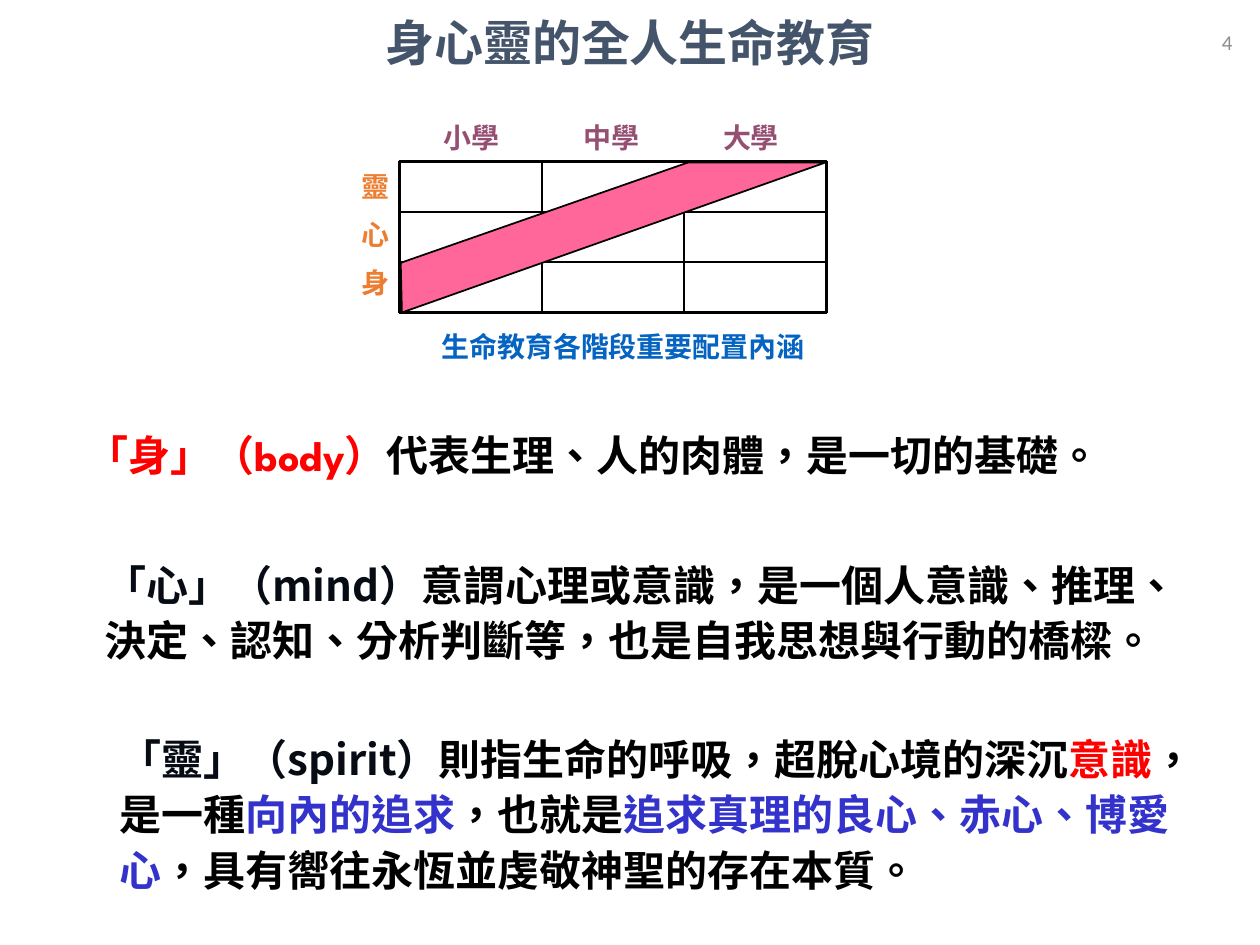
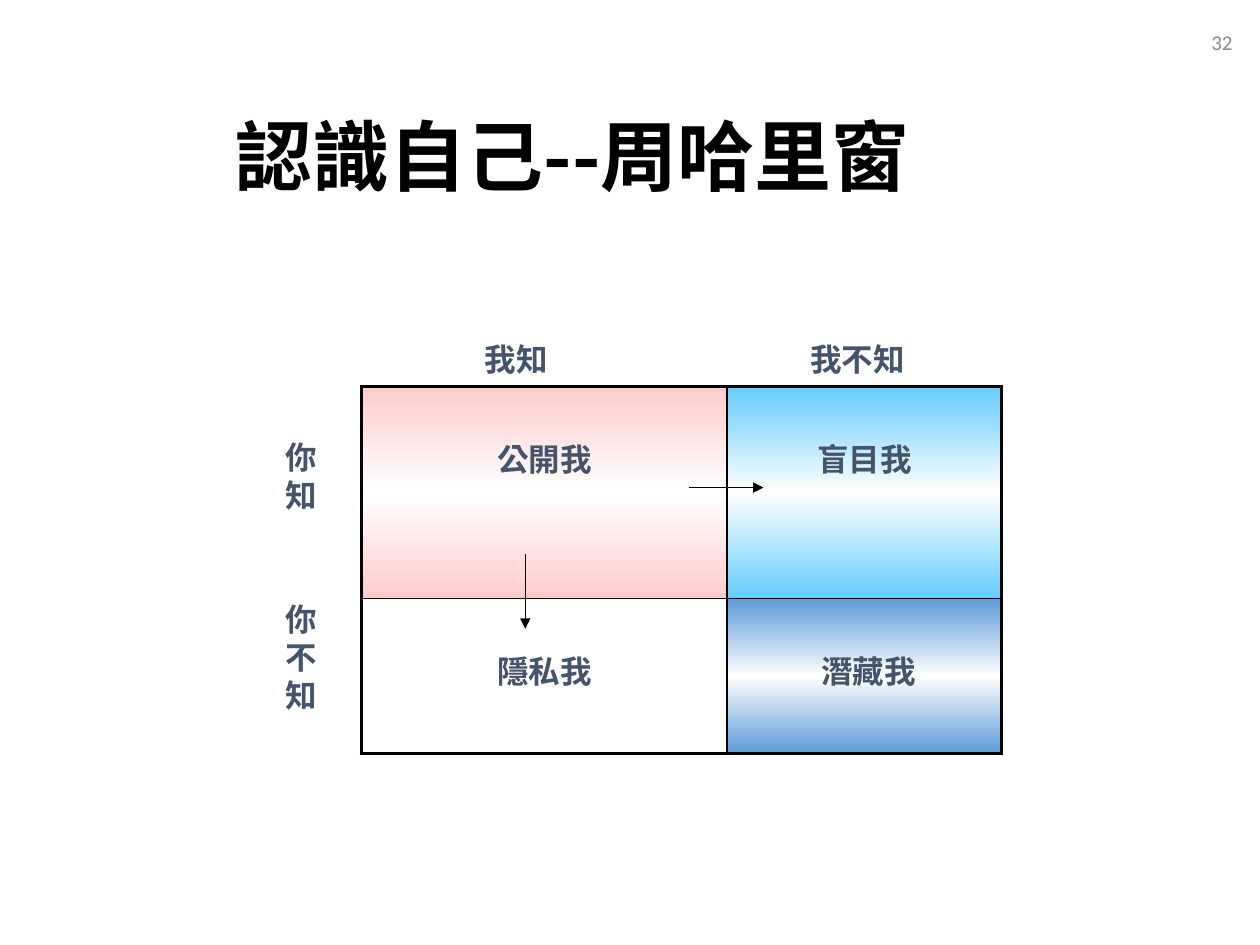
from copy import deepcopy

from pptx import Presentation
from pptx.dml.color import RGBColor
from pptx.enum.shapes import MSO_CONNECTOR
from pptx.enum.text import MSO_ANCHOR, MSO_AUTO_SIZE, PP_ALIGN
from pptx.oxml.ns import qn
from pptx.oxml.xmlchemy import OxmlElement
from pptx.util import Pt

LEFT, CENTER, RIGHT = PP_ALIGN.LEFT, PP_ALIGN.CENTER, PP_ALIGN.RIGHT
TOP, MIDDLE = MSO_ANCHOR.TOP, MSO_ANCHOR.MIDDLE
STRAIGHT = MSO_CONNECTOR.STRAIGHT
TITLE_ONLY = 5

COLORS = {
    "black": "000000", "white": "FFFFFF", "slate": "44546A", "gray": "8C8C8C",
    "caption": "0563C1", "plum": "954F72", "orange": "ED7D31", "band": "FF6699",
    "red": "FF0000", "ink": "060B14", "violet": "3333CC",
    "pink": "FFCCCC", "sky": "66CCFF", "blue": "5B9BD5",
}
CJK_JP, CJK_SC = "Noto Sans CJK JP", "Noto Sans CJK SC"
LINE_HEIGHT = 1.2

TITLE = {"size": 28, "font": CJK_SC, "color": "slate", "align": CENTER, "anchor": MIDDLE}
BIG_TITLE = {**TITLE, "size": 44, "color": "black", "align": LEFT}
NUMBER = {"size": 12, "font": "Calibri", "color": "gray", "bold": False,
          "align": RIGHT, "anchor": MIDDLE}
CAPTION = {"size": 16, "font": CJK_JP, "color": "caption", "align": CENTER, "spacing": 1.2}
STAGE = {"size": 16, "font": "Arial", "color": "plum", "align": CENTER}
LEVEL = {"size": 16, "font": "Arial", "color": "orange", "before": 8}
BODY = {"size": 24, "font": CJK_JP, "color": "black", "spacing": 1.1}
AXIS = {"size": 18, "font": "Times New Roman", "color": "slate"}
PANE = {"size": 18, "font": CJK_SC, "color": "slate", "align": CENTER}


def rgb(name):
    return RGBColor.from_string(COLORS[name])


class Deck:
    def __init__(self):
        self.prs = Presentation()
        self.prs.slide_width, self.prs.slide_height = Pt(720), Pt(540)

    def slide(self, title, box, style, number):
        self.s = self.prs.slides.add_slide(self.prs.slide_layouts[TITLE_ONLY])
        sp = self.s.shapes.title
        sp.left, sp.top, sp.width, sp.height = map(Pt, box)
        self.fill_text(sp.text_frame, [title], style)
        self.text((549.4, 9.4, 162, 28.8), [number], NUMBER)

    def fill_text(self, tf, paragraphs, style):
        """Fill a frame; a paragraph is a string or a list of (text, overrides)."""
        tf.word_wrap = True
        tf.auto_size = MSO_AUTO_SIZE.NONE
        tf.vertical_anchor = style.get("anchor", TOP)
        for i, content in enumerate(paragraphs):
            p = tf.paragraphs[0] if i == 0 else tf.add_paragraph()
            fmt = {
                "alignment": style.get("align", LEFT),
                "line_spacing": Pt(style["size"] * LINE_HEIGHT * style.get("spacing", 1)),
                "space_before": Pt(style.get("before", 0) if i else 0),
            }
            for key, value in fmt.items():
                setattr(p, key, value)
            runs = [(content, {})] if isinstance(content, str) else content
            for text, overrides in runs:
                self.run(p, text, {**style, **overrides})

    def run(self, p, text, style):
        r = p.add_run()
        r.text = text
        fmt = {"size": Pt(style["size"]), "name": style["font"], "bold": style.get("bold", True)}
        for key, value in fmt.items():
            setattr(r.font, key, value)
        r.font.color.rgb = rgb(style["color"])
        rpr = r._r.get_or_add_rPr()
        rpr.set("lang", "zh-TW")
        ea = OxmlElement("a:ea")
        ea.set("typeface", style["font"] if style["font"] == CJK_SC else CJK_JP)
        rpr.find(qn("a:latin")).addnext(ea)

    def text(self, box, paragraphs, style):
        sp = self.s.shapes.add_textbox(*map(Pt, box))
        self.fill_text(sp.text_frame, paragraphs, style)

    def line(self, start, end, width, arrow=False):
        sp = self.s.shapes.add_connector(STRAIGHT, *map(Pt, (*start, *end)))
        sp.line.color.rgb = rgb("black")
        sp.line.width = Pt(width)
        if arrow:
            head = OxmlElement("a:tailEnd")
            head.set("type", "triangle")
            sp.line._get_or_add_ln().append(head)
        sp._element.spPr.append(OxmlElement("a:effectLst"))

    def polygon(self, points, fill):
        points = [(Pt(x), Pt(y)) for x, y in points]
        fb = self.s.shapes.build_freeform(*points[0])
        fb.add_line_segments(points[1:], close=True)
        sp = fb.convert_to_shape()
        sp.shadow.inherit = False
        sp.fill.solid()
        sp.fill.fore_color.rgb = rgb(fill)
        sp.line.color.rgb = rgb("black")
        sp.line.width = Pt(1)

    def table(self, origin, widths, heights, panes):
        """Draw panes, given as rows of (text, fill, left margin)."""
        box = (*origin, sum(widths), sum(heights))
        frame = self.s.shapes.add_table(len(heights), len(widths), *map(Pt, box))
        tbl = frame.table
        for column, width in zip(tbl.columns, widths):
            column.width = Pt(width)
        for row, height in zip(tbl.rows, heights):
            row.height = Pt(height)
        last_row, last_col = len(heights) - 1, len(widths) - 1
        for i, row in enumerate(panes):
            for j, (text, fill, margin) in enumerate(row):
                cell = tbl.cell(i, j)
                self.fill_text(cell.text_frame, [text], PANE)
                cell.margin_left, cell.margin_right = Pt(margin), Pt(5)
                cell.margin_top, cell.vertical_anchor = Pt(32), TOP
                outer = {"L": j == 0, "R": j == last_col, "T": i == 0, "B": i == last_row}
                for side, is_outer in outer.items():
                    self.border(cell, side, 2.25 if is_outer else 1)
                self.fill_cell(cell, fill)

    def border(self, cell, side, width):
        ln = OxmlElement(f"a:ln{side}")
        ln.set("w", str(Pt(width)))
        solid, color = OxmlElement("a:solidFill"), OxmlElement("a:srgbClr")
        color.set("val", COLORS["black"])
        solid.append(color)
        ln.append(solid)
        cell._tc.get_or_add_tcPr().append(ln)

    def fill_cell(self, cell, name):
        """Fill plain white, or with a vertical fade through white."""
        fill = cell.fill
        if name == "white":
            fill.solid()
            fill.fore_color.rgb = rgb(name)
            return
        fill.gradient()
        fill.gradient_angle = 90
        stops = cell._tc.tcPr.find(".//" + qn("a:gsLst"))
        stops.insert(1, deepcopy(stops[0]))
        for stop, place, color in zip(fill.gradient_stops, (0, 0.5, 1), (name, "white", name)):
            stop.position = place
            stop.color.rgb = rgb(color)


def life_education(deck):
    deck.slide("身心靈的全人生命教育", (36, 9.4, 648, 28.8), TITLE, "4")
    deck.text((205.2, 180.7, 301.7, 30.2), ["生命教育各階段重要配置內涵"], CAPTION)

    left, top, col_w, row_h, n = 228.2, 92.2, 81.4, 28.8, 3
    right, bottom = left + n * col_w, top + n * row_h
    for i in range(n + 1):
        width = 1.5 if i in (0, n) else 1
        x, y = left + i * col_w, top + i * row_h
        deck.line((left, y), (right, y), width)
        deck.line((x, top), (x, bottom), width)
    for i, stage in enumerate(("小學", "中學", "大學")):
        deck.text((239.5 + i * 79.8, 65.5, 60, 26.6), [stage], STAGE)
    deck.text((199.4, 93.6, 31, 85), ["靈", "心", "身"], LEVEL)
    deck.polygon([(229, 150.2), (393.1, 92.9), (471.6, 92.9), (229.7, 178.6)], "band")

    red, ink, violet = ({"color": name} for name in ("red", "ink", "violet"))
    deck.text((42.5, 239, 574.6, 70), [[
        ("「身」（body）", {**red, "font": "League Spartan"}),
        ("代表生理、人的肉體，是一切的基礎。", {}),
    ]], BODY)
    deck.text((52.6, 313.2, 614.9, 102), [[
        ("「心」（mind）", ink),
        ("意謂心理或意識，是一個人意識、推理、決定、認知、分析判斷等，也是自我思想與行動的橋樑。", {}),
    ]], BODY)
    deck.text((61.2, 412.6, 622.8, 102), [[
        ("「靈」（spirit）", ink),
        ("則指生命的呼吸，超脫心境的深沉", {}),
        ("意識", red),
        ("，是一種", {}),
        ("向內的追求", violet),
        ("，也就是", {}),
        ("追求真理的良心、赤心、博愛心", violet),
        ("，具有嚮往永恆並虔敬神聖的存在本質。", {}),
    ]], BODY)


def johari_window(deck):
    deck.slide("認識自己--周哈里窗", (127.4, 59, 459.4, 59), BIG_TITLE, "32")
    deck.table((206.6, 221), (208.8, 157), (121, 88.6), [
        [("公開我", "pink", 5), ("盲目我", "sky", 5)],
        [("隱私我", "white", 5), ("潛藏我", "blue", 9.6)],
    ])
    axis_labels = {
        "我知": (270, 190.5, 67, 28.8),
        "我不知": (455.8, 190.5, 72, 28.8),
        "你知": (156.2, 247, 33.8, 51),
        "你不知": (156.2, 339.5, 33.8, 72.7),
    }
    for label, box in axis_labels.items():
        deck.text(box, [label], AXIS)
    deck.line((300.2, 316.8), (300.2, 359.3), 0.75, arrow=True)
    deck.line((393.8, 278.6), (436.3, 278.6), 0.75, arrow=True)


def main():
    deck = Deck()
    life_education(deck)
    johari_window(deck)
    deck.prs.save("out.pptx")


if __name__ == "__main__":
    main()
